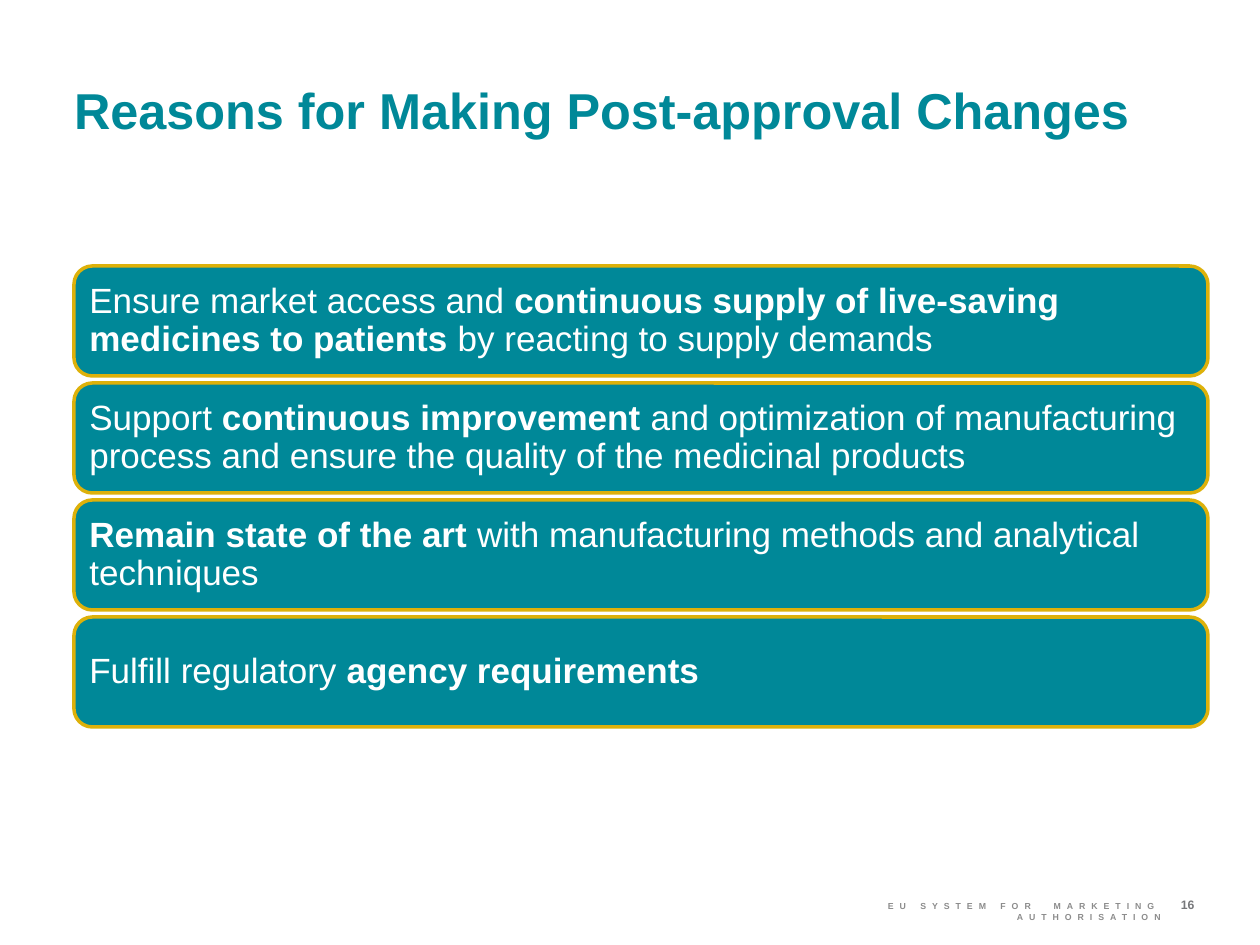
from pptx import Presentation
from pptx.dml.color import RGBColor
from pptx.enum.shapes import MSO_SHAPE
from pptx.enum.text import MSO_ANCHOR, PP_ALIGN
from pptx.util import Pt

EMU_PER_PX = 914400 / 126
COLORS = {
    "teal": "008898",
    "gold": "DDB10A",
    "white": "FFFFFF",
    "footer": "8C8C8C",
    "number": "77787B",
}
REASONS = [
    [("Ensure market access and ", False),
     ("continuous supply of live-saving medicines to patients ", True),
     ("by reacting to supply demands", False)],
    [("Support ", False),
     ("continuous improvement ", True),
     ("and optimization of manufacturing process and ensure the quality of the medicinal products", False)],
    [("Remain state of the art ", True),
     ("with manufacturing methods and analytical techniques", False)],
    [("Fulfill regulatory ", False),
     ("agency requirements", True)],
]
REASON_TOP, REASON_BOTTOM, REASON_HEIGHT = 266, 728, 110


def px(length):
    return round(length * EMU_PER_PX)


def color(name):
    return RGBColor.from_string(COLORS[name])


def set_attributes(target, values):
    for name, value in values.items():
        setattr(target, name, value)


def format_frame(frame, anchor, inset=0):
    margins = ("margin_left", "margin_top", "margin_right", "margin_bottom")
    set_attributes(frame, {"word_wrap": True, "vertical_anchor": anchor})
    set_attributes(frame, dict.fromkeys(margins, px(inset)))


def add_run(paragraph, text, size, color_name, bold=True):
    run = paragraph.add_run()
    run.text = text
    set_attributes(run.font, {"name": "Arial", "size": Pt(size), "bold": bold})
    run.font.color.rgb = color(color_name)
    return run


def add_title(slide, text):
    title = slide.shapes.title
    set_attributes(title, {"left": px(74), "top": px(74), "width": px(1122), "height": px(71)})
    format_frame(title.text_frame, MSO_ANCHOR.MIDDLE)
    paragraph = title.text_frame.paragraphs[0]
    paragraph.alignment = PP_ALIGN.LEFT
    add_run(paragraph, text, 28.8, "teal")


def add_reason(slide, top, parts):
    box = slide.shapes.add_shape(
        MSO_SHAPE.ROUNDED_RECTANGLE, px(74), px(top), px(1134), px(REASON_HEIGHT))
    box.shadow.inherit = False
    box.fill.solid()
    box.fill.fore_color.rgb = color("teal")
    box.line.color.rgb = color("gold")
    box.line.width = Pt(2)
    format_frame(box.text_frame, MSO_ANCHOR.MIDDLE, 10)
    paragraph = box.text_frame.paragraphs[0]
    set_attributes(paragraph, {"alignment": PP_ALIGN.LEFT, "line_spacing": 0.9})
    for text, bold in parts:
        add_run(paragraph, text, 20, "white", bold)


def add_label(slide, bounds, text, size, color_name, alignment):
    label = slide.shapes.add_textbox(*map(px, bounds))
    format_frame(label.text_frame, MSO_ANCHOR.TOP)
    paragraph = label.text_frame.paragraphs[0]
    paragraph.alignment = alignment
    return add_run(paragraph, text, size, color_name)


def main():
    presentation = Presentation()
    set_attributes(presentation, {"slide_width": px(1260), "slide_height": px(945)})
    slide = presentation.slides.add_slide(presentation.slide_layouts[5])
    add_title(slide, "Reasons for Making Post-approval Changes")
    pitch = (REASON_BOTTOM - REASON_HEIGHT - REASON_TOP) // (len(REASONS) - 1)
    for index, parts in enumerate(REASONS):
        add_reason(slide, REASON_TOP + index * pitch, parts)
    footer = add_label(slide, (774, 901, 387, 20), "EU SYSTEM FOR  MARKETING AUTHORISATION",
                       5, "footer", PP_ALIGN.RIGHT)
    footer.font._element.set("spc", "340")
    add_label(slide, (1181, 897, 54, 21), "16", 7, "number", PP_ALIGN.LEFT)
    presentation.save("out.pptx")


if __name__ == "__main__":
    main()
